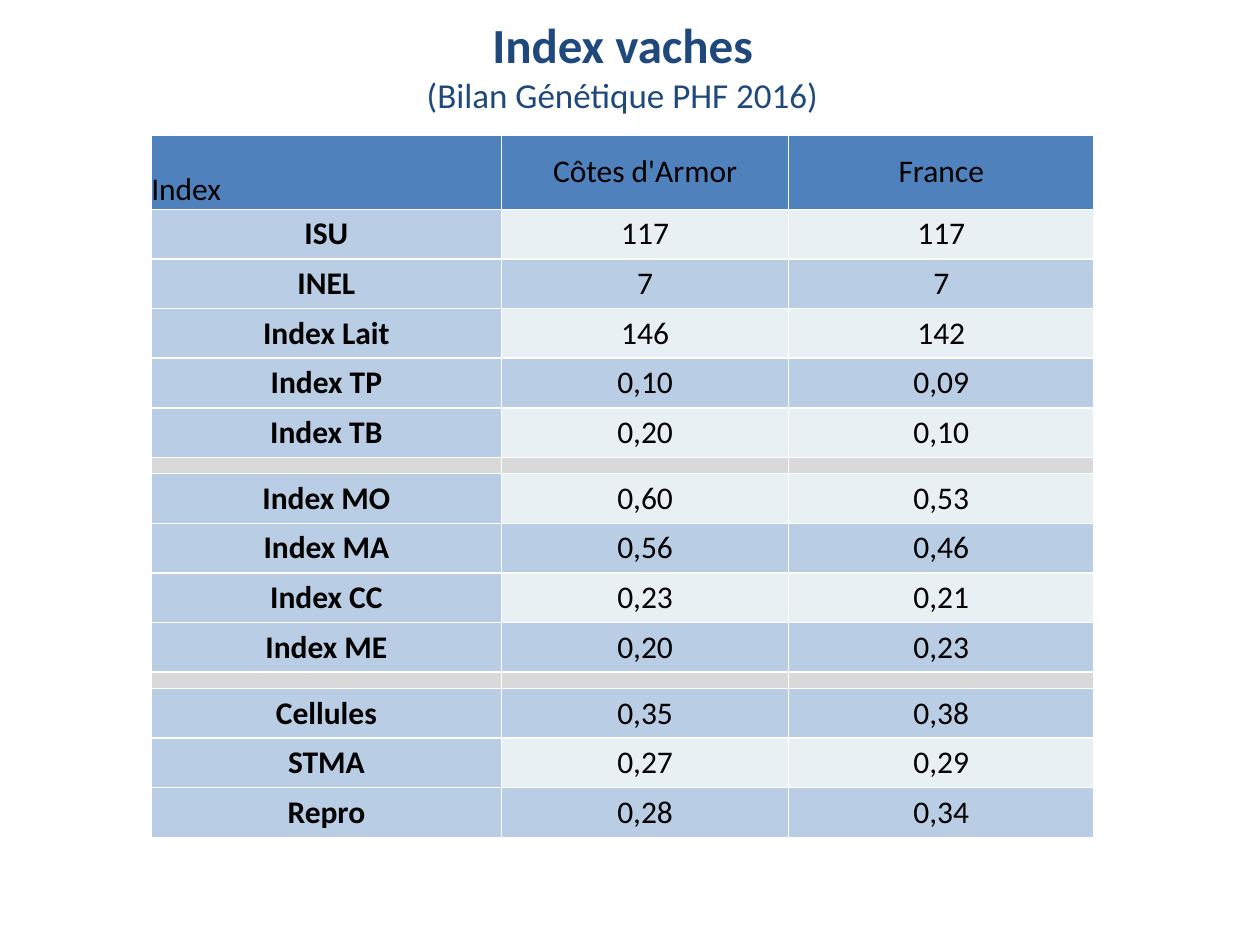
from dataclasses import dataclass

from lxml import etree
from pptx import Presentation
from pptx.dml.color import RGBColor
from pptx.enum.text import MSO_ANCHOR, MSO_AUTO_SIZE, PP_ALIGN
from pptx.oxml.ns import qn
from pptx.util import Cm, Pt

CENTER, LEFT = PP_ALIGN.CENTER, PP_ALIGN.LEFT
MIDDLE, BOTTOM = MSO_ANCHOR.MIDDLE, MSO_ANCHOR.BOTTOM
NO_FIT = MSO_AUTO_SIZE.NONE


@dataclass(frozen=True)
class Theme:
    font: str = "Calibri"
    title: str = "1F497D"
    text: str = "000000"
    head: str = "4F81BD"
    dark: str = "B9CDE5"
    light: str = "E8F0F4"
    gap: str = "D9D9D9"
    big: int = 28
    sub: int = 20
    body: int = 18
    tiny: int = 4


class Deck:
    def __init__(self, theme):
        self.theme = theme
        self.prs = Presentation()
        self.prs.slide_width, self.prs.slide_height = Cm(25.4), Cm(19.05)
        self.slide = self.prs.slides.add_slide(self.prs.slide_layouts[5])

    def style(self, font, size, color, bold=False):
        font.name, font.size, font.bold = self.theme.font, Pt(size), bold
        font.color.rgb = RGBColor.from_string(color)

    def title(self, main, sub, box):
        shape = self.slide.shapes.title
        shape.left, shape.top, shape.width, shape.height = map(Cm, box)
        frame = shape.text_frame
        frame.auto_size, frame.vertical_anchor = NO_FIT, MIDDLE
        para = frame.paragraphs[0]
        para.alignment = CENTER
        t = self.theme
        for text, size, bold in ((main, t.big, True), (sub, t.sub, False)):
            if para.runs:
                para.add_line_break()
            run = para.add_run()
            run.text = text
            self.style(run.font, size, t.title, bold)

    def cell(self, cell, text, fill, bold=False, align=CENTER, anchor=MIDDLE):
        cell.margin_left = cell.margin_right = 0
        cell.margin_top = cell.margin_bottom = 0
        cell.vertical_anchor = anchor
        cell.fill.solid()
        cell.fill.fore_color.rgb = RGBColor.from_string(fill)
        para = cell.text_frame.paragraphs[0]
        para.alignment = align
        if text:
            para.text = text
            self.style(para.font, self.theme.body, self.theme.text, bold)
        else:
            # An empty cell takes its height from the end mark
            end = etree.SubElement(para._p, qn("a:endParaRPr"))
            end.set("sz", str(self.theme.tiny * 100))

    def table(self, head, rows, left, top, widths, heights):
        t = self.theme
        tall, line, thin = heights
        sizes = [tall] + [line if row else thin for row in rows]
        table = self.slide.shapes.add_table(
            len(sizes), len(widths), Cm(left), Cm(top),
            Cm(sum(widths)), Cm(sum(sizes))).table
        table.first_row = table.horz_banding = False
        for col, width in zip(table.columns, widths):
            col.width = Cm(width)
        for row, size in zip(table.rows, sizes):
            row.height = Cm(size)

        # Header row
        for c, text in enumerate(head):
            align, anchor = (CENTER, MIDDLE) if c else (LEFT, BOTTOM)
            self.cell(table.cell(0, c), text, t.head, align=align, anchor=anchor)

        # Body rows: banded values, bold labels, grey separators
        for r, row in enumerate(rows, 1):
            band = t.light if r % 2 else t.dark
            for c, text in enumerate(row or [""] * len(widths)):
                fill = t.gap if not row else band if c else t.dark
                self.cell(table.cell(r, c), text, fill, bold=c == 0)


HEAD = ("Index", "Côtes d'Armor", "France")
GAP = ()
ROWS = (
    ("ISU", "117", "117"),
    ("INEL", "7", "7"),
    ("Index Lait", "146", "142"),
    ("Index TP", "0,10", "0,09"),
    ("Index TB", "0,20", "0,10"),
    GAP,
    ("Index MO", "0,60", "0,53"),
    ("Index MA", "0,56", "0,46"),
    ("Index CC", "0,23", "0,21"),
    ("Index ME", "0,20", "0,23"),
    GAP,
    ("Cellules", "0,35", "0,38"),
    ("STMA", "0,27", "0,29"),
    ("Repro", "0,28", "0,34"),
)


def main():
    deck = Deck(Theme())
    deck.title("Index vaches", "(Bilan Génétique PHF 2016)",
               (0, 0.33, 25.1, 1.96))
    deck.table(HEAD, ROWS, 3.05, 2.72, (7.06, 5.79, 6.15), (1.5, 1, 0.33))
    deck.prs.save("out.pptx")


if __name__ == "__main__":
    main()
